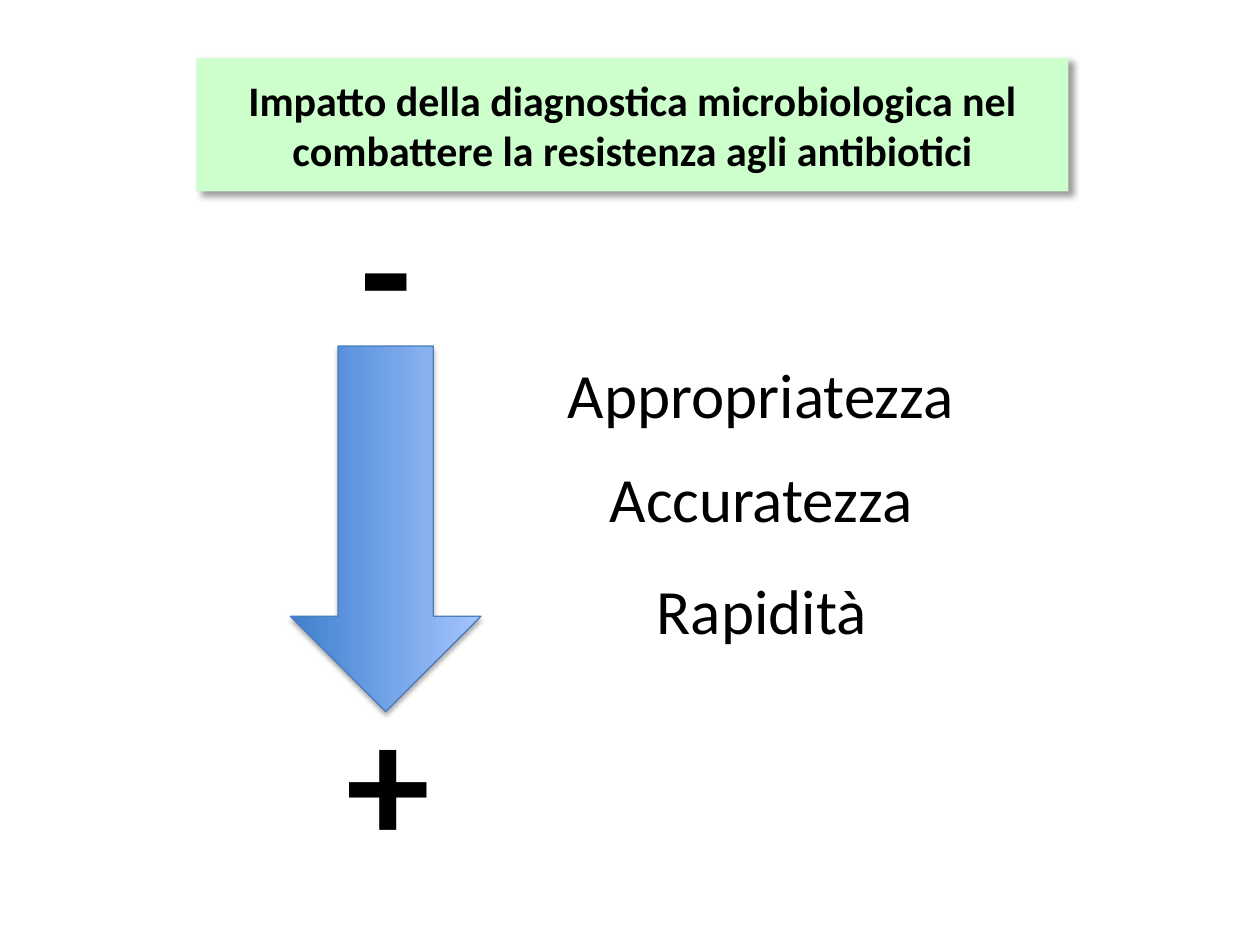
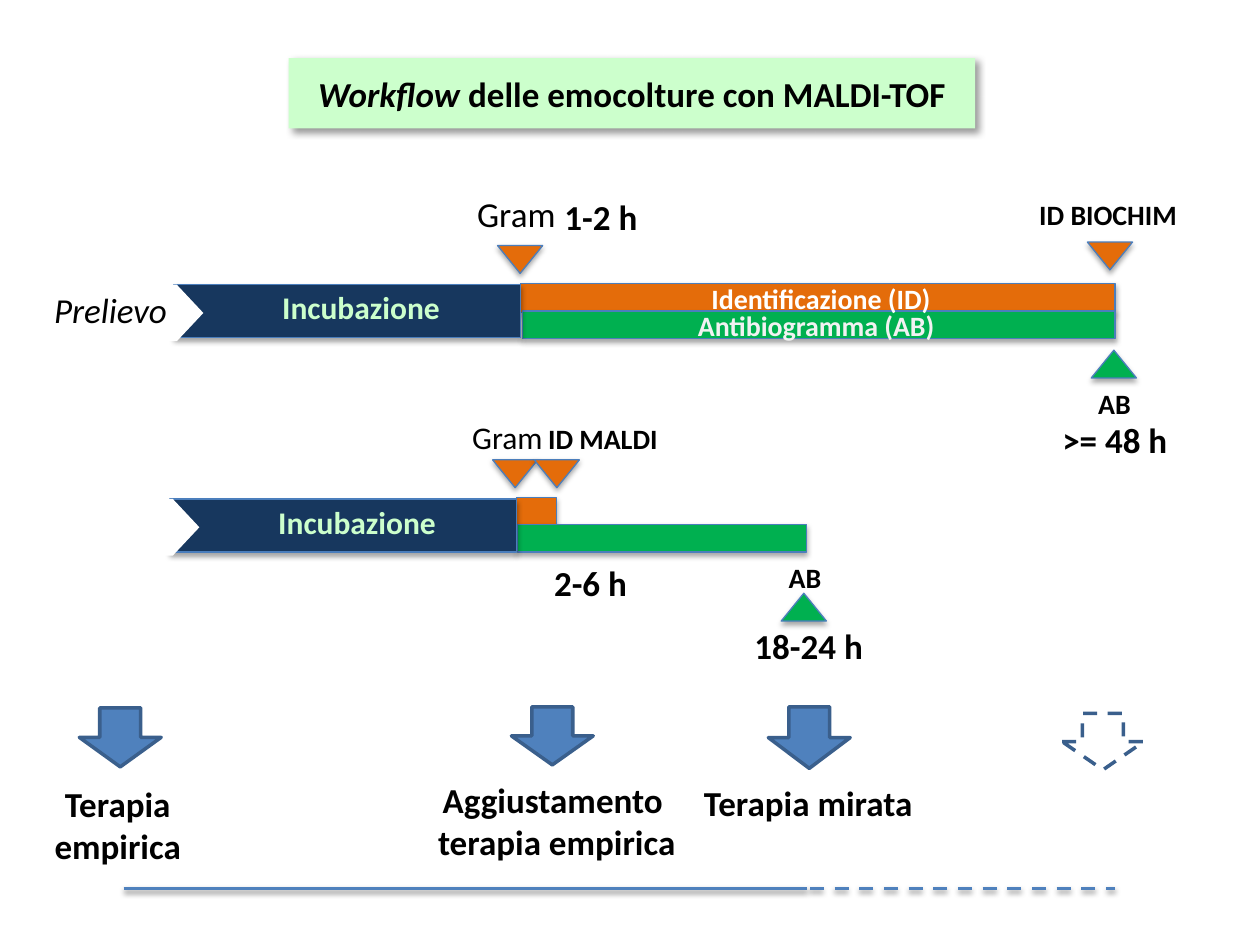
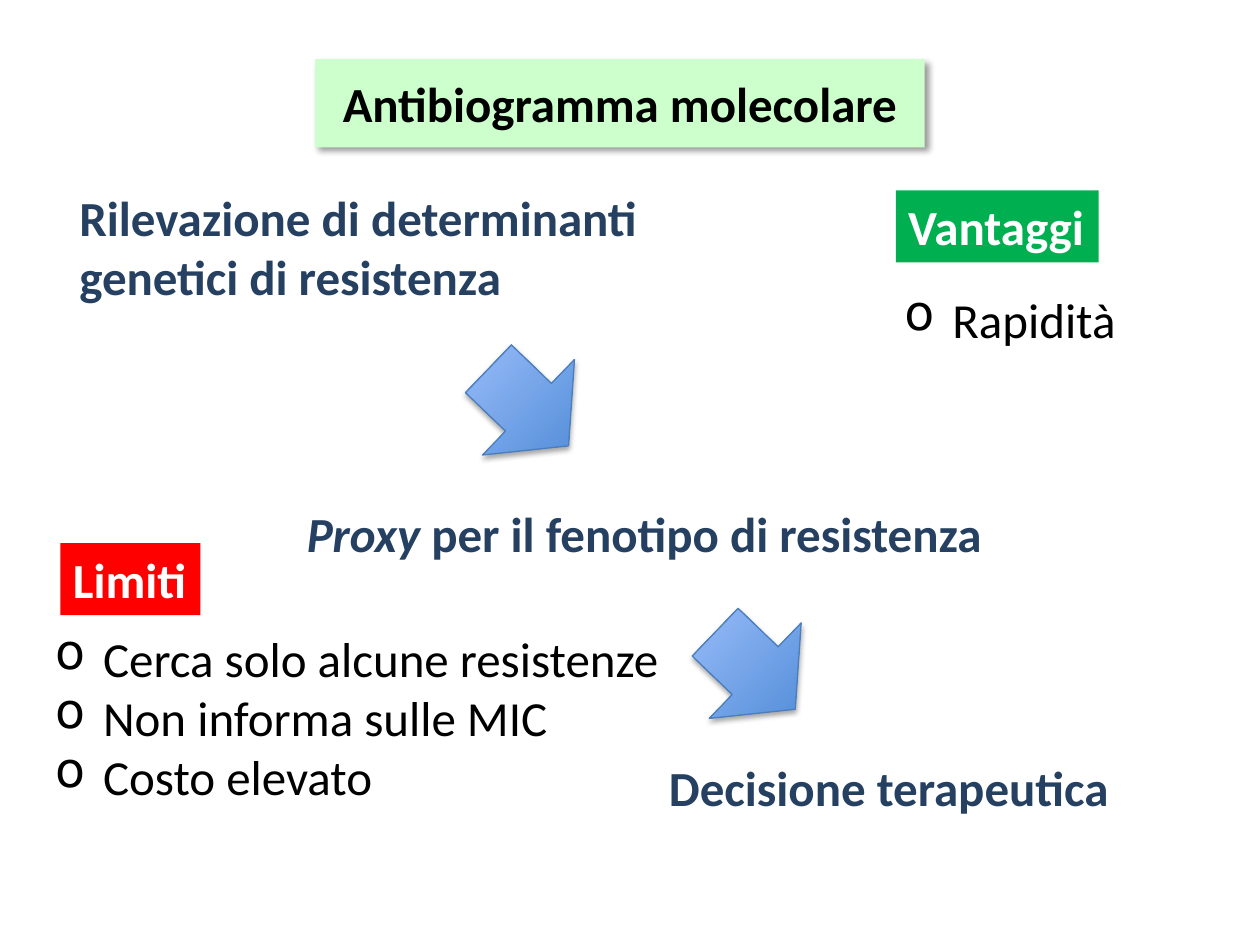
from dataclasses import dataclass
from typing import NamedTuple, Optional

from lxml import etree
from pptx import Presentation
from pptx.dml.color import RGBColor
from pptx.enum import dml, shapes, text
from pptx.oxml.ns import qn
from pptx.util import Cm, Pt

# Shared style
FONT = "Calibri"
BLACK, WHITE = "000000", "FFFFFF"
MINT, NAVY, TEXT_BLUE = "CCFFCC", "17375E", "254061"
ORANGE, GREEN, RED = "E46C0A", "00B050", "FF0000"
BLUE, OUTLINE, ARROW_EDGE = "4F81BD", "4B7EBC", "3A5F8C"
GRADIENT = ("3F80CE", "A4C4FF")
BULLET_INDENT = Cm(0.97)
Preset = shapes.MSO_SHAPE
CENTER = text.PP_ALIGN.CENTER


class Box(NamedTuple):
    left: float
    top: float
    width: float
    height: float


class Shadow(NamedTuple):
    opacity: int
    blur: float
    distance: float
    angle: int


TITLE_SHADOW = Shadow(40, 4, 3, 45)
SHAPE_SHADOW = Shadow(35, 3.1, 1.8, 90)
LINE_SHADOW = Shadow(38, 3.1, 1.6, 90)


@dataclass
class Label:
    content: str
    box: Box
    size: int = 16
    color: str = BLACK
    bold: bool = True
    italic: bool = False
    lead: str = ""  # italic words before the content
    centered: bool = False
    wrap: bool = False
    space_after: int = 0
    bullet: str = ""
    fill: Optional[str] = None


@dataclass
class Figure:
    preset: Preset
    box: Box
    fill: Optional[str] = None
    gradient: bool = False
    line: Optional[str] = OUTLINE
    line_width: float = 0.75
    dashed: bool = False
    rotation: float = 0
    shadow: Optional[Shadow] = SHAPE_SHADOW


def rgb(value: str) -> RGBColor:
    return RGBColor.from_string(value)


def place(shape, box: Box) -> None:
    shape.left, shape.top, shape.width, shape.height = map(Cm, box)


def set_fill(shape, color: Optional[str]) -> None:
    if color:
        shape.fill.solid()
        shape.fill.fore_color.rgb = rgb(color)
    else:
        shape.fill.background()


def set_line(line, color: str, width: float, dashed: bool) -> None:
    line.color.rgb = rgb(color)
    line.width = Pt(width)
    if dashed:
        line.dash_style = dml.MSO_LINE.DASH


def set_shadow(shape, shadow: Optional[Shadow]) -> None:
    """Call last: the effect list follows fill and line."""
    effects = etree.SubElement(shape.element.spPr, qn("a:effectLst"))
    if shadow:
        outer = etree.SubElement(
            effects, qn("a:outerShdw"), blurRad=str(Pt(shadow.blur)),
            dist=str(Pt(shadow.distance)), dir=str(shadow.angle * 60000),
            algn="ctr", rotWithShape="0")
        color = etree.SubElement(outer, qn("a:srgbClr"), val=BLACK)
        etree.SubElement(color, qn("a:alpha"), val=str(shadow.opacity * 1000))


def write_text(frame, label: Label) -> None:
    frame.word_wrap = label.wrap
    for index, line in enumerate(label.content.split("\n")):
        paragraph = frame.add_paragraph() if index else frame.paragraphs[0]
        if label.centered:
            paragraph.alignment = CENTER
        if label.space_after:
            paragraph.space_after = Pt(label.space_after)
        if label.bullet:
            properties = paragraph._p.get_or_add_pPr()
            properties.set("marL", str(BULLET_INDENT))
            properties.set("indent", str(-BULLET_INDENT))
            etree.SubElement(properties, qn("a:buChar"), char=label.bullet)
        if label.lead:
            lead = paragraph.add_run()
            lead.text = label.lead
            lead.font.italic = True
        paragraph.add_run().text = line
        font = paragraph.font
        font.name, font.size = FONT, Pt(label.size)
        font.bold, font.italic = label.bold, label.italic
        font.color.rgb = rgb(label.color)


def add_label(slide, label: Label) -> None:
    shape = slide.shapes.add_textbox(*map(Cm, label.box))
    write_text(shape.text_frame, label)
    shape.text_frame.auto_size = text.MSO_AUTO_SIZE.SHAPE_TO_FIT_TEXT
    if label.fill:
        set_fill(shape, label.fill)


def add_figure(slide, figure: Figure) -> None:
    shape = slide.shapes.add_shape(figure.preset, *map(Cm, figure.box))
    shape.rotation = figure.rotation
    if figure.gradient:
        shape.fill.gradient()
        shape.fill.gradient_angle = 90
        for stop, color in zip(shape.fill.gradient_stops, GRADIENT):
            stop.color.rgb = rgb(color)
    else:
        set_fill(shape, figure.fill)
    if figure.line:
        set_line(shape.line, figure.line, figure.line_width, figure.dashed)
    else:
        shape.line.fill.background()
    set_shadow(shape, figure.shadow)


def add_titled_slide(presentation, title: Label):
    slide = presentation.slides.add_slide(presentation.slide_layouts[5])
    shape = slide.shapes.title
    place(shape, title.box)
    set_fill(shape, MINT)
    set_shadow(shape, TITLE_SHADOW)
    title.centered = title.wrap = True
    write_text(shape.text_frame, title)
    shape.text_frame.auto_size = text.MSO_AUTO_SIZE.NONE
    shape.text_frame.vertical_anchor = text.MSO_ANCHOR.MIDDLE
    return slide


# Slide 1: impact of diagnostics
def build_impact(presentation) -> None:
    slide = add_titled_slide(presentation, Label(
        "Impatto della diagnostica microbiologica nel combattere "
        "la resistenza agli antibiotici", Box(3.96, 1.17, 17.58, 2.69), 24))
    add_figure(slide, Figure(Preset.RIGHT_ARROW, Box(4.09, 8.74, 7.37, 3.84),
                             gradient=True, rotation=90))
    add_label(slide, Label("-", Box(7.01, 3.15, 1.55, 4.37), 96))
    add_label(slide, Label("+", Box(6.73, 13.49, 2.21, 4.37), 96))
    middle = 15.38
    for word, top, width in (("Appropriatezza", 7.04, 8.36),
                             ("Accuratezza", 9.14, 6.68),
                             ("Rapidità", 11.4, 4.78)):
        add_label(slide, Label(word, Box(middle - width / 2, top, width, 1.8),
                               36, bold=False, space_after=12))


# Slide 2: blood culture workflow
def add_incubation(slide, left: float, top: float) -> None:
    add_figure(slide, Figure(Preset.RECTANGLE, Box(left, top, 6.99, 1.07), NAVY))
    add_label(slide, Label("Incubazione", Box(left + 1.93, top - 0.05, 3.71, 1.02),
                           18, MINT))
    add_figure(slide, Figure(Preset.PENTAGON, Box(left - 0.48, top, 1.07, 1.14),
                             WHITE, line=None, shadow=None))


def build_workflow(presentation) -> None:
    slide = add_titled_slide(presentation, Label(
        "delle emocolture con MALDI-TOF", Box(5.82, 1.17, 13.84, 1.42), 20,
        lead="Workflow "))

    # Identification and susceptibility bars
    for color, box in ((ORANGE, Box(10.49, 5.72, 11.99, 0.58)),
                       (GREEN, Box(10.54, 6.27, 11.94, 0.56)),
                       (ORANGE, Box(10.41, 10.03, 0.81, 0.56)),
                       (GREEN, Box(10.44, 10.57, 5.82, 0.56))):
        add_figure(slide, Figure(Preset.RECTANGLE, box, color))
    add_incubation(slide, 3.51, 5.74)
    add_incubation(slide, 3.43, 10.06)

    # Markers: orange point down, green point up
    for color, left, top in ((ORANGE, 10.03, 4.95), (ORANGE, 21.92, 4.88),
                             (GREEN, 22, 7.06), (ORANGE, 9.93, 9.27),
                             (ORANGE, 10.77, 9.27), (GREEN, 15.75, 11.96)):
        add_figure(slide, Figure(Preset.ISOSCELES_TRIANGLE,
                                 Box(left, top, 0.91, 0.56), color,
                                 rotation=180 if color == ORANGE else 0))

    labels = (
        # Conventional timeline
        Label("Identificazione (ID)", Box(13.87, 5.56, 5.36, 0.94),
              color=WHITE, centered=True, wrap=True),
        Label("Antibiogramma (AB)", Box(13.56, 6.1, 5.79, 0.94),
              color="F2F2F2", centered=True, wrap=True),
        Label("Gram", Box(9.37, 3.76, 2.11, 1.12), 20, bold=False),
        Label("1-2 h", Box(11.13, 3.81, 2.46, 1.12), 20, wrap=True),
        Label("ID BIOCHIM", Box(20.7, 3.86, 3.33, 0.94)),
        Label("Prelievo", Box(0.84, 5.69, 2.82, 1.12), 20, bold=False, italic=True),
        Label("AB", Box(21.89, 7.67, 1.19, 0.94)),
        Label(">= 48 h", Box(20.9, 8.31, 3.15, 1.12), 20, centered=True, wrap=True),
        # Fast timeline
        Label("Gram", Box(9.27, 8.31, 1.96, 1.02), 18, bold=False),
        Label("ID MALDI", Box(10.8, 8.38, 2.74, 0.94)),
        Label("2-6 h", Box(10.92, 11.2, 2.13, 1.12), 20, wrap=True),
        Label("AB", Box(15.65, 11.18, 1.17, 0.94)),
        Label("18-24 h", Box(14.96, 12.47, 2.84, 1.12), 20, wrap=True),
        # Therapy steps
        Label("Terapia\nempirica", Box(0.84, 15.65, 3.07, 1.96), 20, centered=True),
        Label("Aggiustamento \nterapia empirica", Box(8.56, 15.57, 5.33, 1.96), 20,
              centered=True),
        Label("Terapia mirata", Box(13.92, 15.62, 4.75, 1.12), 20, centered=True),
    )
    for label in labels:
        add_label(slide, label)

    # Therapy arrows, the last one only outlined
    for left, top, height, fill in ((1.6, 14.27, 1.19, BLUE),
                                    (10.31, 14.25, 1.17, BLUE),
                                    (15.49, 14.25, 1.24, BLUE),
                                    (21.41, 14.38, 1.14, None)):
        add_figure(slide, Figure(Preset.DOWN_ARROW, Box(left, top, 1.65, height),
                                 fill, line=ARROW_EDGE, line_width=2,
                                 dashed=fill is None, shadow=None))

    # Time axis
    axis = Cm(17.91)
    for start, end, dashed in ((2.49, 16.26, False), (16.33, 22.48, True)):
        connector = slide.shapes.add_connector(
            shapes.MSO_CONNECTOR.STRAIGHT, Cm(start), axis, Cm(end), axis)
        set_line(connector.line, BLUE, 2, dashed)
        set_shadow(connector, LINE_SHADOW)


# Slide 3: molecular susceptibility testing
def build_molecular(presentation) -> None:
    slide = add_titled_slide(presentation, Label(
        "Antibiogramma molecolare", Box(6.35, 1.19, 12.29, 1.78), 28))
    for left, top in ((9.32, 7.09), (13.89, 12.4)):
        add_figure(slide, Figure(Preset.DOWN_ARROW, Box(left, top, 2.67, 2.24),
                                 gradient=True, rotation=313.9))

    # Steps from detection to decision
    for lead, content, box in (
            ("", "Rilevazione di determinanti genetici di resistenza",
             Box(1.35, 3.66, 12.19, 2.64)),
            ("Proxy ", "per il fenotipo di resistenza",
             Box(5.77, 10.03, 14.43, 1.45)),
            ("", "Decisione terapeutica", Box(11.96, 15.14, 11.91, 1.45))):
        add_label(slide, Label(content, box, 28, TEXT_BLUE, lead=lead, wrap=True,
                               centered=box.left > 5, space_after=6))

    # Advantages and limits
    for heading, fill, heading_box, items, items_box in (
            ("Vantaggi", GREEN, Box(18.06, 3.84, 4.09, 1.45),
             "Rapidità", Box(17.98, 5.72, 4.8, 1.45)),
            ("Limiti", RED, Box(1.22, 10.95, 2.82, 1.45),
             "Cerca solo alcune resistenze\nNon informa sulle MIC\nCosto elevato",
             Box(0.86, 12.55, 12.78, 3.84))):
        add_label(slide, Label(heading, heading_box, 28, WHITE, fill=fill))
        add_label(slide, Label(items, items_box, 28, bold=False, bullet="o"))


def main() -> None:
    presentation = Presentation()
    presentation.slide_width, presentation.slide_height = Cm(25.4), Cm(19.05)
    build_impact(presentation)
    build_workflow(presentation)
    build_molecular(presentation)
    presentation.save("out.pptx")


if __name__ == "__main__":
    main()
